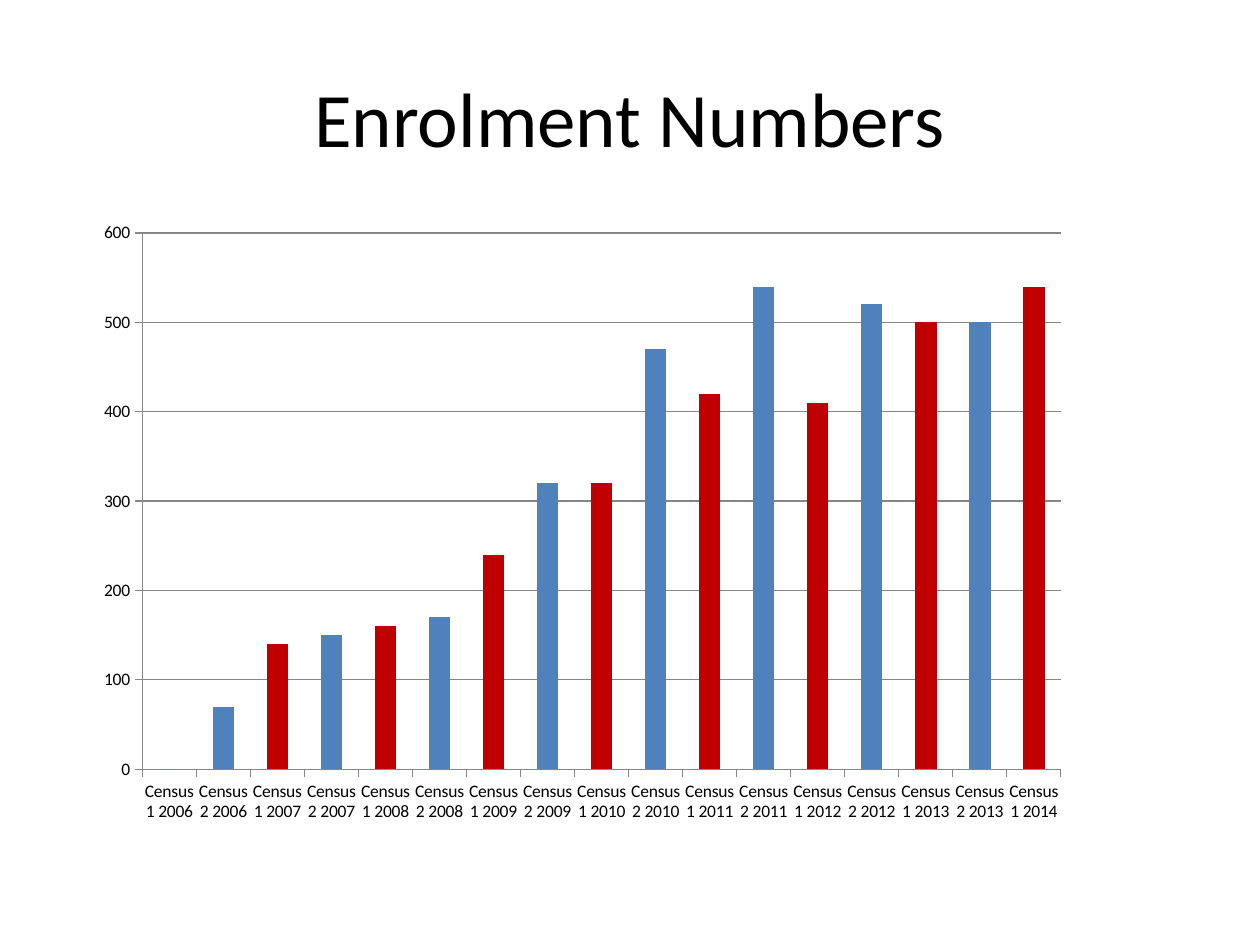
from lxml import etree
from pptx import Presentation
from pptx.chart.data import CategoryChartData
from pptx.dml.color import RGBColor
from pptx.enum.chart import XL_CHART_TYPE, XL_TICK_MARK
from pptx.enum.text import MSO_ANCHOR, PP_ALIGN
from pptx.oxml.ns import qn
from pptx.util import Pt

BLACK = RGBColor(0x00, 0x00, 0x00)
GREY = RGBColor(0x86, 0x86, 0x86)
BLUE = RGBColor(0x4F, 0x81, 0xBD)
RED = RGBColor(0xC0, 0x00, 0x00)
FONT = "Calibri"

deck = Presentation()
deck.slide_width, deck.slide_height = Pt(720), Pt(540)
slide = deck.slides.add_slide(deck.slide_layouts[5])

# Title
title = slide.shapes.title
title.left, title.top, title.width, title.height = Pt(36), Pt(21.6), Pt(648), Pt(90)
frame = title.text_frame
frame.text = "Enrolment Numbers"
frame.vertical_anchor = MSO_ANCHOR.MIDDLE
line = frame.paragraphs[0]
line.alignment = PP_ALIGN.CENTER
font = line.runs[0].font
font.name, font.size = FONT, Pt(44)
font.color.rgb = BLACK

# Two counts a year, from the first of 2006 to the first of 2014
counts = [0, 70, 140, 150, 160, 170, 240, 320, 320, 470,
          420, 540, 410, 520, 500, 500, 540]
data = CategoryChartData(number_format="#,##0")
data.categories = [f"Census {i % 2 + 1} {2006 + i // 2}" for i in range(len(counts))]
data.add_series("Series 1", counts)
chart = slide.shapes.add_chart(
    XL_CHART_TYPE.COLUMN_CLUSTERED, Pt(36), Pt(126), Pt(648), Pt(356.4), data).chart
chart.has_legend = False
chart.has_title = False
chart.font.name, chart.font.size = FONT, Pt(10)
chart.font.color.rgb = BLACK

# Bars: the first census of each year is red
plot = chart.plots[0]
plot.gap_width = 150
plot.vary_by_categories = False
bars = plot.series[0]
bars.format.fill.solid()
bars.format.fill.fore_color.rgb = BLUE
for i in range(2, len(counts), 2):
    fill = bars.points[i].format.fill
    fill.solid()
    fill.fore_color.rgb = RED

# Axes
scale = chart.value_axis
scale.minimum_scale, scale.maximum_scale, scale.major_unit = 0, 600, 100
scale.has_major_gridlines = True
scale.tick_labels.number_format = "#,##0"
scale.tick_labels.number_format_is_linked = False
for axis in (chart.category_axis, scale):
    axis.major_tick_mark = XL_TICK_MARK.OUTSIDE
    axis.minor_tick_mark = XL_TICK_MARK.NONE
for part in (chart.category_axis, scale, scale.major_gridlines):
    part.format.line.color.rgb = GREY
    part.format.line.width = Pt(0.75)

# Inner plot area, as fractions of the chart
area = chart._chartSpace.chart.plotArea
for old in area.findall(qn("c:layout")):
    area.remove(old)
layout = etree.Element(qn("c:layout"))
area.insert(0, layout)
manual = etree.SubElement(layout, qn("c:manualLayout"))
rules = [("layoutTarget", "inner"), ("xMode", "edge"), ("yMode", "edge"),
         ("x", "0.07"), ("y", "0.02"), ("w", "0.81"), ("h", "0.86")]
for tag, val in rules:
    etree.SubElement(manual, qn(f"c:{tag}")).set("val", val)

deck.save("out.pptx")
